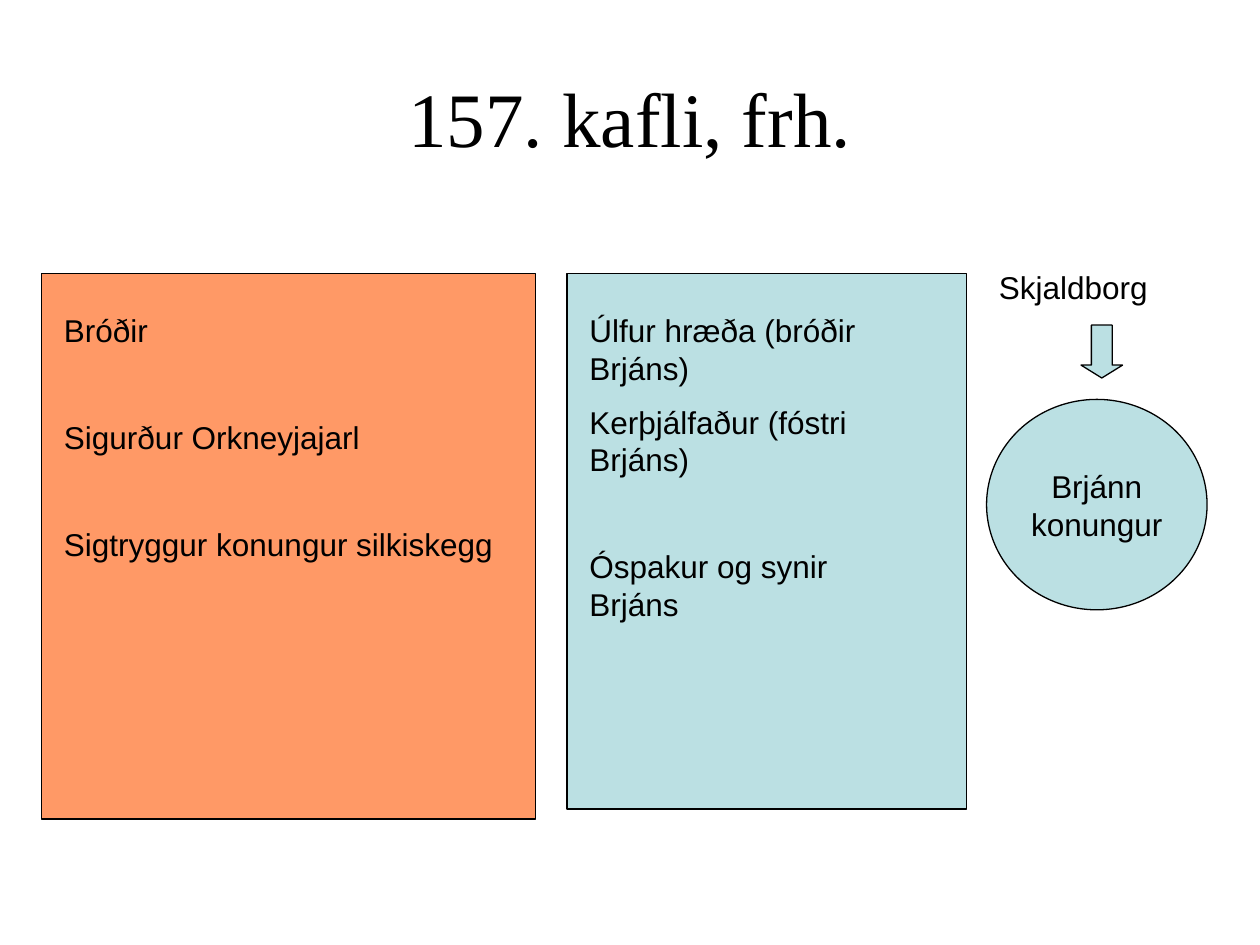
from pptx import Presentation, util as u
from pptx.dml.color import RGBColor
from pptx.enum import shapes, text

BLACK, ORANGE, BLUE = "000000", "FF9966", "BBE0E3"
NEAR, FAR = 9, 39.5


def rgb(value):
    """Return the colour for a hex string."""
    return RGBColor.from_string(value)


def add_shape(s, kind, box, fill):
    """Draw a filled preset shape with a thin black outline."""
    sp = s.shapes.add_shape(kind, *map(u.Inches, box))
    sp.shadow.inherit = False
    sp.fill.solid()
    sp.fill.fore_color.rgb = rgb(fill)
    sp.line.color.rgb = rgb(BLACK)
    sp.line.width = u.Pt(0.75)
    return sp


def write(tf, items, size=18, font="Arial", align=text.PP_ALIGN.LEFT):
    """Fill a text frame from pairs of wording and space before."""
    for i, (wording, gap) in enumerate(items):
        p = tf.add_paragraph() if i else tf.paragraphs[0]
        p.alignment = align
        p.space_before = u.Pt(gap)
        r = p.add_run()
        r.text = wording
        r.font.size = u.Pt(size)
        r.font.name = font
        r.font.color.rgb = rgb(BLACK)


def add_text(s, box, items, anchor=text.MSO_ANCHOR.TOP, **style):
    """Place a wrapping text box."""
    tf = s.shapes.add_textbox(*map(u.Inches, box)).text_frame
    tf.word_wrap = True
    tf.vertical_anchor = anchor
    write(tf, items, **style)


def add_title(s, box, wording):
    """Place the centred slide title."""
    add_text(s, box, [(wording, 0)], text.MSO_ANCHOR.MIDDLE, size=44,
             font="Times New Roman", align=text.PP_ALIGN.CENTER)


def add_army(s, box, fill, text_width, members):
    """Draw one army's panel and list its members."""
    x, y, w, h = box
    add_shape(s, shapes.MSO_SHAPE.RECTANGLE, box, fill)
    add_text(s, (x + 0.08, y + 0.25, text_width, h - 0.4), members)


def add_shield_wall(s, box):
    """Draw the label, the arrow and the king's circle below it."""
    x, y, w, h = box
    add_text(s, (x, y, w, 0.5), [("Skjaldborg", 0)])
    arrow = add_shape(s, shapes.MSO_SHAPE.DOWN_ARROW,
                      (x + 0.75, y + 0.5, 0.33, 0.42), BLUE)
    arrow.adjustments[1] = 0.31
    king = add_shape(s, shapes.MSO_SHAPE.OVAL,
                     (x, y + h - 1.67, 1.75, 1.67), BLUE)
    tf = king.text_frame
    tf.word_wrap = False
    tf.vertical_anchor = text.MSO_ANCHOR.MIDDLE
    write(tf, [("Brjánn", 0), ("konungur", 0)], align=text.PP_ALIGN.CENTER)


def main():
    """Build the slide and save it."""
    prs = Presentation()
    prs.slide_width, prs.slide_height = u.Inches(10), u.Inches(7.5)
    s = prs.slides.add_slide(prs.slide_layouts[6])
    add_title(s, (0.5, 0.3, 9, 1.25), "157. kafli, frh.")
    add_shield_wall(s, (7.83, 2.08, 1.92, 2.76))
    add_army(s, (0.33, 2.17, 3.92, 4.33), ORANGE, 3.67, [
        ("Bróðir", 0),
        ("Sigurður Orkneyjajarl", FAR),
        ("Sigtryggur konungur silkiskegg", FAR)])
    add_army(s, (4.5, 2.17, 3.17, 4.25), BLUE, 2.83, [
        ("Úlfur hræða (bróðir Brjáns)", 0),
        ("Kerþjálfaður (fóstri Brjáns)", NEAR),
        ("Óspakur og synir Brjáns", FAR)])
    prs.save("out.pptx")


if __name__ == "__main__":
    main()
